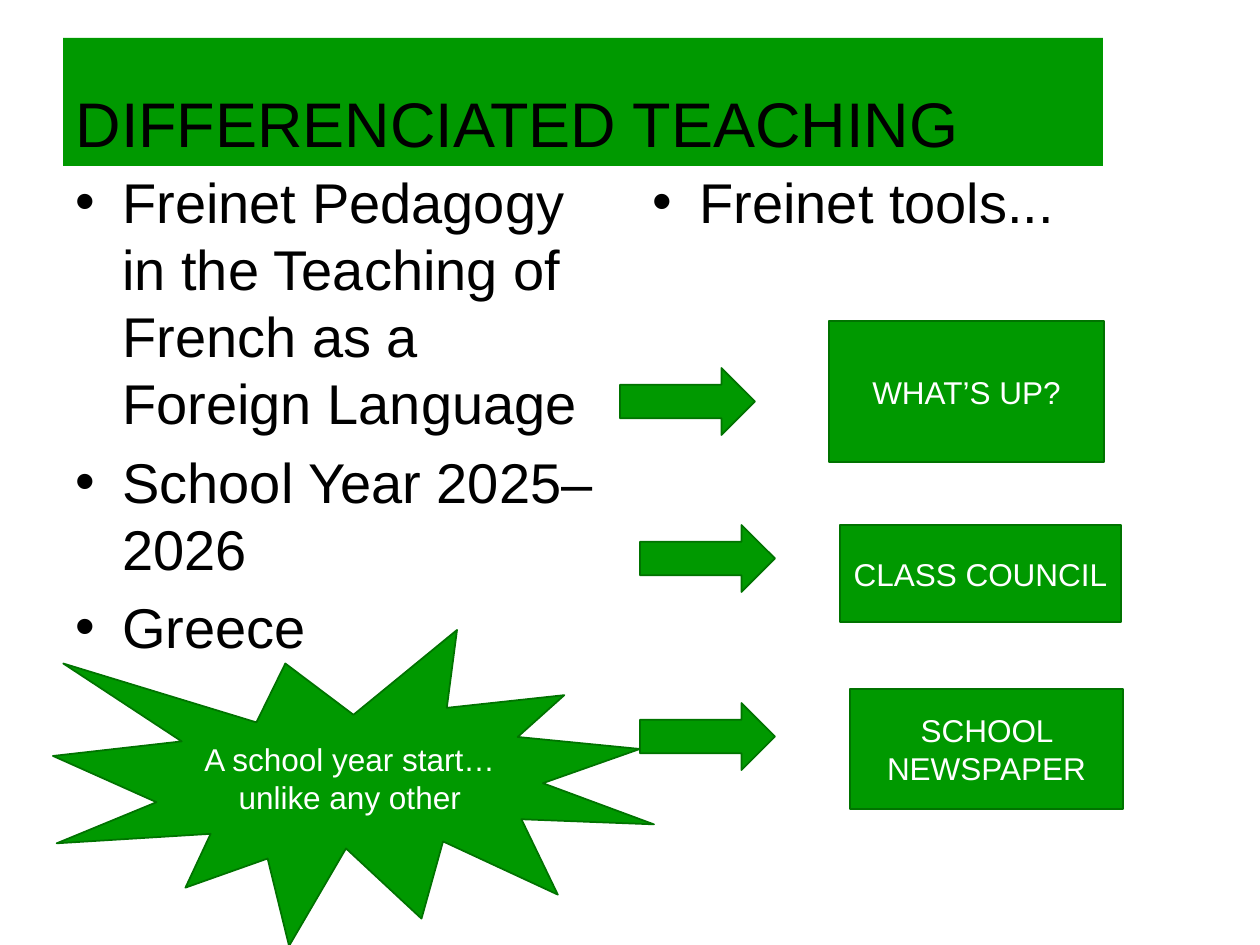
from pptx import Presentation
from pptx.dml.color import RGBColor
from pptx.enum.shapes import MSO_SHAPE
from pptx.enum.text import MSO_ANCHOR, MSO_AUTO_SIZE, PP_ALIGN
from pptx.oxml.ns import qn
from pptx.util import Emu, Pt
from lxml.etree import SubElement

COLORS = {"green": "009900", "edge": "007300", "black": "000000", "white": "FFFFFF"}
FONT = "Arial"
PX_PER_INCH = 126
ARROW_SIZE = (135, 67)

TOOLS = [
    # arrow position, box geometry, label
    ((620, 368), (829, 321, 275, 141), "WHAT’S UP?"),
    ((640, 525), (840, 525, 281, 97), "CLASS COUNCIL"),
    ((640, 703), (850, 689, 273, 120), "SCHOOL NEWSPAPER"),
]


def px(length):
    return Emu(round(length * 914400 / PX_PER_INCH))


def color(name):
    return RGBColor.from_string(COLORS[name])


class SlideBuilder:
    def __init__(self, page):
        self.page = page

    def set_font(self, para, size, color_name):
        para.font.name = FONT
        para.font.size = Pt(size)
        para.font.color.rgb = color(color_name)

    def fill(self, shape):
        shape.fill.solid()
        shape.fill.fore_color.rgb = color("green")

    def title(self, left, top, width, height, text):
        title = self.page.shapes.title
        title.left, title.top = px(left), px(top)
        title.width, title.height = px(width), px(height)
        self.fill(title)
        frame = title.text_frame
        frame.text = text
        frame.auto_size = MSO_AUTO_SIZE.NONE
        frame.vertical_anchor = MSO_ANCHOR.BOTTOM
        para = frame.paragraphs[0]
        para.alignment = PP_ALIGN.LEFT
        self.set_font(para, 36, "black")

    def bullets(self, left, top, width, height, items):
        box = self.page.shapes.add_textbox(px(left), px(top), px(width), px(height))
        frame = box.text_frame
        frame.word_wrap = True
        for index, item in enumerate(items):
            para = frame.add_paragraph() if index else frame.paragraphs[0]
            para.text = item
            if index:
                para.space_before = Pt(6.4)
            properties = para._p.get_or_add_pPr()
            properties.set("marL", str(px(47)))
            properties.set("indent", str(px(-47)))
            SubElement(properties, qn("a:buFont"), typeface=FONT)
            SubElement(properties, qn("a:buChar"), char="•")
            self.set_font(para, 32, "black")

    def shape(self, kind, left, top, width, height, text=""):
        shape = self.page.shapes.add_shape(kind, px(left), px(top), px(width), px(height))
        shape.shadow.inherit = False
        self.fill(shape)
        shape.line.color.rgb = color("edge")
        shape.line.width = Pt(1)
        if text:
            frame = shape.text_frame
            frame.text = text
            frame.word_wrap = True
            frame.vertical_anchor = MSO_ANCHOR.MIDDLE
            para = frame.paragraphs[0]
            para.alignment = PP_ALIGN.CENTER
            self.set_font(para, 18, "white")


def main():
    deck = Presentation()
    deck.slide_width, deck.slide_height = px(1260), px(945)
    builder = SlideBuilder(deck.slides.add_slide(deck.slide_layouts[5]))

    builder.title(63, 38, 1040, 128, "DIFFERENCIATED TEACHING")
    builder.bullets(63, 161, 557, 683, [
        "Freinet Pedagogy in the Teaching of French as a Foreign Language",
        "School Year 2025–2026",
        "Greece",
    ])
    builder.bullets(640, 161, 557, 683, ["Freinet tools..."])
    builder.shape(MSO_SHAPE.EXPLOSION1, 53, 630, 601, 316,
                  "A school year start… unlike any other")
    for arrow_position, box_geometry, label in TOOLS:
        builder.shape(MSO_SHAPE.RIGHT_ARROW, *arrow_position, *ARROW_SIZE)
        builder.shape(MSO_SHAPE.FLOWCHART_PROCESS, *box_geometry, label)

    deck.save("out.pptx")


if __name__ == "__main__":
    main()
